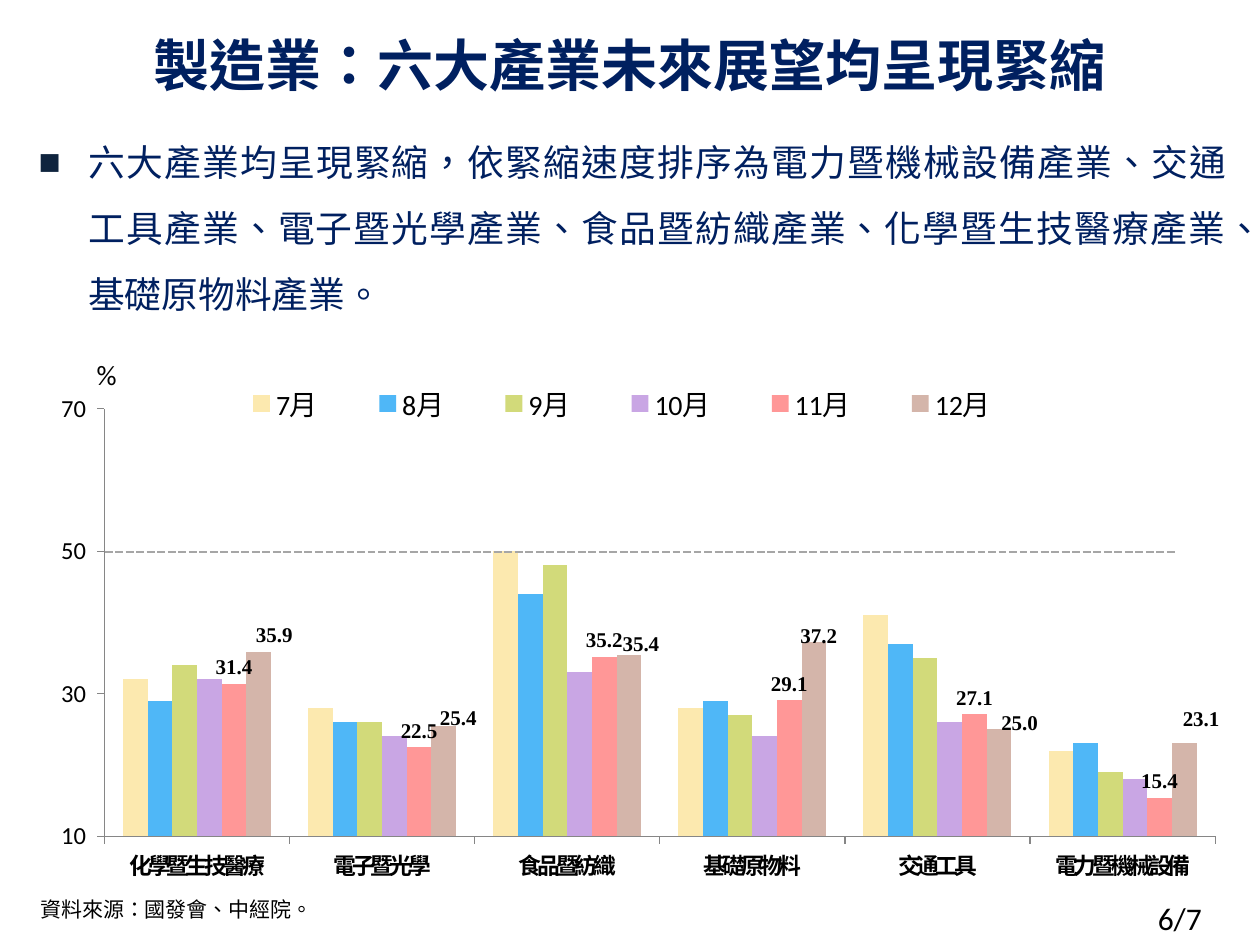
"""Build a slide on the manufacturing outlook of six industries."""
from lxml.etree import SubElement
from pptx import Presentation
from pptx.chart.data import CategoryChartData
from pptx.dml.color import RGBColor as Rgb
from pptx.enum.chart import XL_CHART_TYPE as ChartType, XL_LABEL_POSITION as LabelPos
from pptx.enum.chart import XL_LEGEND_POSITION as LegendPos, XL_TICK_MARK as Tick
from pptx.enum.dml import MSO_LINE as Dash
from pptx.enum.lang import MSO_LANGUAGE_ID as Language
from pptx.enum.shapes import MSO_CONNECTOR as Connector
from pptx.enum.text import MSO_ANCHOR as Anchor, MSO_AUTO_SIZE as AutoSize, PP_ALIGN as Align
from pptx.oxml import parse_xml
from pptx.oxml.ns import nsdecls, qn
from pptx.util import Cm, Pt

TITLE = "製造業：六大產業未來展望均呈現緊縮"
SUMMARY = ("六大產業均呈現緊縮，依緊縮速度排序為電力暨機械設備產業、交通工具產業、"
           "電子暨光學產業、食品暨紡織產業、化學暨生技醫療產業、基礎原物料產業。")
SOURCE = "資料來源：國發會、中經院。"
PAGE = "6/7"
UNIT = "%"
INDUSTRIES = ["化學暨生技醫療", "電子暨光學", "食品暨紡織", "基礎原物料", "交通工具", "電力暨機械設備"]
MONTHS = [
    ("7月", "FCE9AF", [32, 28, 50, 28, 41, 22]),
    ("8月", "4FB7F7", [29, 26, 44, 29, 37, 23]),
    ("9月", "D2DA7A", [34, 26, 48, 27, 35, 19]),
    ("10月", "C9A6E4", [32, 24, 33, 24, 26, 18]),
    ("11月", "FF9797", [31.4, 22.5, 35.2, 29.1, 27.1, 15.4]),
    ("12月", "D4B5AA", [35.9, 25.4, 35.4, 37.2, 25.0, 23.1]),
]
LABELLED_MONTHS = 2
LATEST_LABEL_SHIFTS_PERMILLE = [(13, 0), (12, 15), (10, 10), (4, 19), (17, 18), (14, -14)]

THEME = {
    "navy": "002060", "bullet": "0F243E", "ink": "000000", "guide": "A6A6A6", "axis": "868686",
    "cjk": "Noto Sans CJK SC", "source_font": "Noto Sans CJK JP", "latin": "Calibri",
    "chart_font": "Cabin", "label_font": "Times New Roman",
    "title": 32, "body": 21, "page": 18, "legend": 16, "scale": 14, "category": 13, "small": 12,
}


def style_font(font, name, size, color=THEME["ink"], bold=False):
    font.name, font.size, font.bold = name, Pt(size), bold
    font.color.rgb = Rgb.from_string(color)


def write_text(frame, text, font, size, color=THEME["ink"], bold=False, align=Align.LEFT,
               line=None, anchor=Anchor.TOP, insets=(0.25, 0.13)):
    frame.word_wrap, frame.auto_size = True, AutoSize.NONE
    frame.vertical_anchor = anchor
    frame.margin_left = frame.margin_right = Cm(insets[0])
    frame.margin_top = frame.margin_bottom = Cm(insets[1])
    paragraph = frame.paragraphs[0]
    paragraph.alignment = align
    paragraph.space_before = Pt(0)
    if line:
        paragraph.line_spacing = Pt(line)
    run = paragraph.add_run()
    run.text = text
    style_font(run.font, font, size, color, bold)
    run.font.language_id = Language.TRADITIONAL_CHINESE
    SubElement(run._r.get_or_add_rPr(), qn("a:ea")).set("typeface", font)
    return paragraph


def add_bullet(paragraph, indent, hanging):
    properties = paragraph._p.get_or_add_pPr()
    properties.set("marL", str(Cm(indent)))
    properties.set("indent", str(-Cm(hanging)))
    color = SubElement(SubElement(properties, qn("a:buClr")), qn("a:srgbClr"))
    color.set("val", THEME["bullet"])
    SubElement(properties, qn("a:buChar")).set("char", "■")


def manual_layout(**parts):
    items = "".join(f'<c:{key} val="{value}"/>' for key, value in parts.items())
    return parse_xml(f'<c:layout {nsdecls("c")}><c:manualLayout>{items}</c:manualLayout></c:layout>')


def format_axis(axis, font, size, bold=False):
    axis.has_major_gridlines = False
    axis.major_tick_mark, axis.minor_tick_mark = Tick.OUTSIDE, Tick.NONE
    axis.format.line.color.rgb = Rgb.from_string(THEME["axis"])
    style_font(axis.tick_labels.font, font, size, bold=bold)


def format_labels(series, shifts):
    labels = series.data_labels
    labels.show_value = True
    labels.number_format, labels.number_format_is_linked = "0.0", False
    labels.position = LabelPos.OUTSIDE_END
    style_font(labels.font, THEME["label_font"], THEME["small"], bold=True)
    for index, (x, y) in enumerate(shifts):
        label = series.points[index].data_label
        style_font(label.font, THEME["label_font"], THEME["small"], bold=True)
        label.position = LabelPos.OUTSIDE_END
        entry = labels._element.findall(qn("c:dLbl"))[index]
        entry.find(qn("c:idx")).addnext(manual_layout(x=x / 1000, y=y / 1000))


def add_outlook_chart(slide):
    data = CategoryChartData()
    data.categories = INDUSTRIES
    for month, _, values in MONTHS:
        data.add_series(month, values, number_format="0.0")
    chart = slide.shapes.add_chart(ChartType.COLUMN_CLUSTERED, Cm(0.65), Cm(7.08),
                                   Cm(24.26), Cm(10.95), data).chart
    style_font(chart.font, THEME["chart_font"], THEME["page"])
    chart.has_title = False
    plot = chart.plots[0]
    plot.gap_width, plot.overlap, plot.vary_by_categories = 150, 0, False

    scale, industries = chart.value_axis, chart.category_axis
    format_axis(scale, THEME["latin"], THEME["scale"])
    format_axis(industries, THEME["cjk"], THEME["category"], bold=True)
    scale.minimum_scale, scale.maximum_scale, scale.major_unit = 10, 70, 20
    scale.tick_labels.number_format = r"0_ ;[Red]\-0\ "
    scale.tick_labels.number_format_is_linked = False
    category_font = industries._element.xpath(".//a:defRPr")[0]
    category_font.set("spc", "-200")
    SubElement(category_font, qn("a:ea")).set("typeface", THEME["cjk"])

    chart.has_legend = True
    legend = chart.legend
    legend.position, legend.include_in_layout = LegendPos.TOP, False
    style_font(legend.font, THEME["latin"], THEME["legend"])
    legend._element.find(qn("c:legendPos")).addnext(
        manual_layout(xMode="edge", yMode="edge", x=0.14, y=0.06, w=0.7, h=0.07))
    area = chart._chartSpace.chart.plotArea
    for layout in area.findall(qn("c:layout")):
        area.remove(layout)
    area.insert(0, manual_layout(layoutTarget="inner", xMode="edge", yMode="edge",
                                 x=0.06, y=0.106, w=0.923, h=0.787))

    for series, (_, color, _) in zip(plot.series, MONTHS):
        series.format.fill.solid()
        series.format.fill.fore_color.rgb = Rgb.from_string(color)
    previous, latest = list(plot.series)[-LABELLED_MONTHS:]
    format_labels(previous, [])
    format_labels(latest, LATEST_LABEL_SHIFTS_PERMILLE)


def add_threshold(slide):
    threshold = slide.shapes.add_connector(Connector.STRAIGHT, Cm(2.11), Cm(11.13), Cm(23.7), Cm(11.13))
    threshold.line.color.rgb = Rgb.from_string(THEME["guide"])
    threshold.line.width, threshold.line.dash_style = Pt(1.5), Dash.SQUARE_DOT
    SubElement(threshold._element.spPr, qn("a:effectLst"))


def place_rounded(shape, left, top, width, height):
    shape.left, shape.top, shape.width, shape.height = map(Cm, (left, top, width, height))
    outline = SubElement(shape._element.spPr, qn("a:prstGeom"))
    outline.set("prst", "roundRect")
    SubElement(outline, qn("a:avLst"))
    return shape.text_frame


def main():
    deck = Presentation()
    deck.slide_width, deck.slide_height = Cm(25.4), Cm(19.05)
    slide = deck.slides.add_slide(deck.slide_layouts[1])
    title, body = slide.placeholders
    write_text(place_rounded(title, 0, 0, 25.4, 2.54), TITLE, THEME["cjk"], THEME["title"],
               THEME["navy"], bold=True, align=Align.CENTER, line=40, anchor=Anchor.MIDDLE)
    summary = write_text(place_rounded(body, 0.1, 2.18, 25.07, 3.89), SUMMARY, THEME["cjk"],
                         THEME["body"], THEME["navy"], align=Align.JUSTIFY, line=37.7,
                         insets=(0.25, 0))
    add_bullet(summary, 1.24, 1)
    add_outlook_chart(slide)
    add_threshold(slide)
    notes = [
        (SOURCE, (0.56, 18.03, 24.87, 0.69), THEME["source_font"], THEME["small"], 12),
        (UNIT, (1.7, 7.07, 1.6, 0.94), THEME["latin"], THEME["legend"], None),
        (PAGE, (23.09, 18, 2.31, 1.02), THEME["latin"], THEME["page"], None),
    ]
    for text, box, font, size, line in notes:
        note = slide.shapes.add_textbox(*map(Cm, box))
        write_text(note.text_frame, text, font, size, line=line)
    deck.save("out.pptx")


if __name__ == "__main__":
    main()
